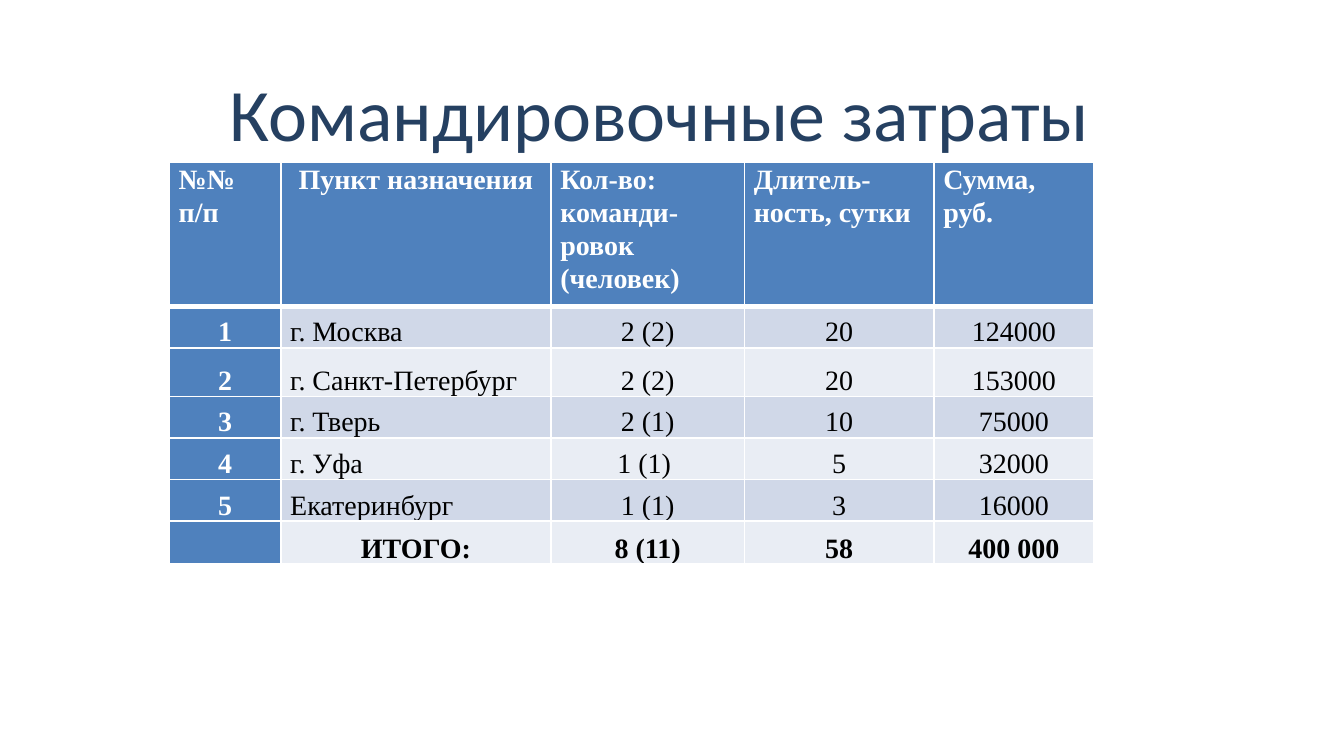
from lxml.etree import SubElement
from pptx import Presentation
from pptx.dml.color import RGBColor
from pptx.enum.text import MSO_ANCHOR, PP_ALIGN
from pptx.oxml.ns import qn
from pptx.util import Inches, Pt

BLUE, WHITE, BLACK, NAVY = "4F81BD", "FFFFFF", "000000", "254061"
BANDS = ("D0D8E8", "E9EDF4")
COL_WIDTHS = (0.83, 2.01, 1.44, 1.41, 1.19)
ROW_HEIGHTS = (1.07, 0.31, 0.36, 0.31, 0.31, 0.31, 0.32)
ROWS = (
    ("№№ п/п", "Пункт назначения", "Кол-во: команди- ровок (человек)",
     "Длитель-ность, сутки", "Сумма, руб."),
    ("1", "г. Москва", "2 (2)", "20", "124000"),
    ("2", "г. Санкт-Петербург", "2 (2)", "20", "153000"),
    ("3", "г. Тверь", "2 (1)", "10", "75000"),
    ("4", "г. Уфа", "1 (1) ", "5", "32000"),
    ("5", "Екатеринбург", "1 (1)", "3", "16000"),
    ("", "ИТОГО:", "8 (11)", "58", "400 000"),
)


def rgb(color):
    return RGBColor.from_string(color)


def set_attrs(obj, values):
    for name, value in values.items():
        setattr(obj, name, value)


def write(p, text, align, color, **font):
    p.alignment = align
    r = p.add_run()
    r.text = text
    set_attrs(r.font, font)
    r.font.color.rgb = rgb(color)


def set_borders(cell, bottom):
    tc_pr = cell._tc.get_or_add_tcPr()
    for side, width in (("L", 1), ("R", 1), ("T", 1), ("B", bottom)):
        ln = SubElement(tc_pr, qn(f"a:ln{side}"), w=str(Pt(width)))
        fill = SubElement(ln, qn("a:solidFill"))
        SubElement(fill, qn("a:srgbClr"), val=WHITE)


def add_title(s, text):
    sp = s.shapes.title
    set_attrs(sp, dict(left=Inches(0.47), top=Inches(0.64),
                       width=Inches(9), height=Inches(0.39)))
    tf = sp.text_frame
    set_attrs(tf, dict(word_wrap=True, vertical_anchor=MSO_ANCHOR.MIDDLE,
                       margin_top=0, margin_bottom=0))
    write(tf.paragraphs[0], text, PP_ALIGN.CENTER, NAVY,
          size=Pt(39.6), name="Calibri")


def fill_cell(cell, text, row, col):
    header, total = row == 0, row == len(ROWS) - 1
    accent = header or col == 0
    set_borders(cell, 3 if header else 1)
    cell.fill.solid()
    cell.fill.fore_color.rgb = rgb(BLUE if accent else BANDS[(row - 1) % 2])
    set_attrs(cell, dict(
        margin_left=Inches(0.07), margin_right=Inches(0.07),
        margin_top=0, margin_bottom=0,
        vertical_anchor=MSO_ANCHOR.TOP if header else MSO_ANCHOR.BOTTOM))
    if not text:
        return
    # Headings are left-aligned except the destination; its entries are the reverse
    centred = (col == 1) if header else (col != 1 or total)
    p = cell.text_frame.paragraphs[0]
    p.line_spacing = 1.07
    write(p, text, PP_ALIGN.CENTER if centred else PP_ALIGN.LEFT,
          WHITE if accent else BLACK,
          size=Pt(15), name="Times New Roman", bold=accent or total)


def add_costs_table(s):
    table = s.shapes.add_table(
        len(ROWS), len(COL_WIDTHS), Inches(1.26), Inches(1.21),
        Inches(sum(COL_WIDTHS)), Inches(sum(ROW_HEIGHTS))).table
    for column, width in zip(table.columns, COL_WIDTHS):
        column.width = Inches(width)
    for row, (texts, height) in enumerate(zip(ROWS, ROW_HEIGHTS)):
        table.rows[row].height = Inches(height)
        for col, text in enumerate(texts):
            fill_cell(table.cell(row, col), text, row, col)


def main():
    prs = Presentation()
    # Widescreen, 16:9
    set_attrs(prs, dict(slide_width=Inches(10),
                        slide_height=Inches(10 * 9 / 16)))
    s = prs.slides.add_slide(prs.slide_layouts[5])  # title only
    add_title(s, "Командировочные затраты ")
    add_costs_table(s)
    prs.save("out.pptx")


if __name__ == "__main__":
    main()
